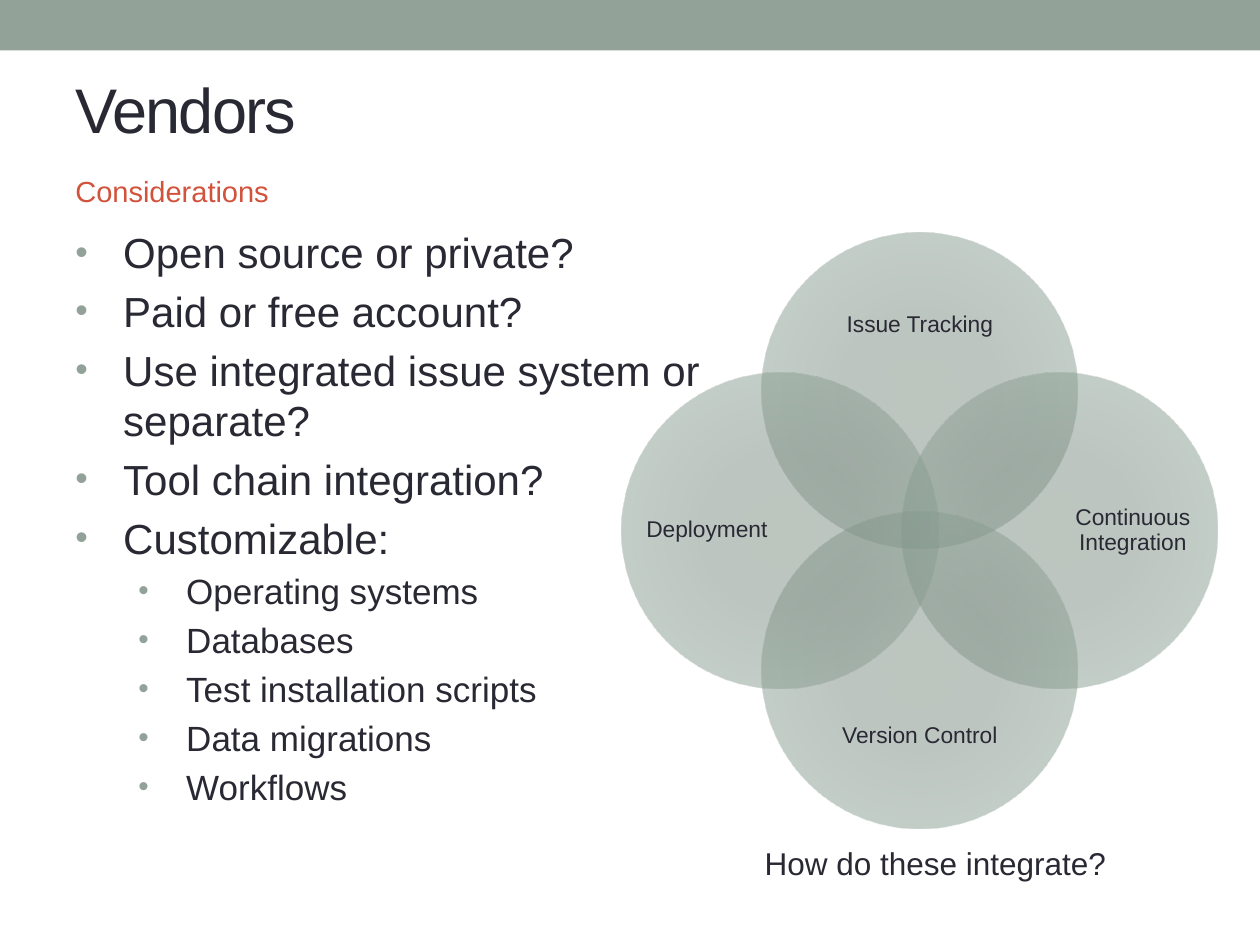
from pptx import Presentation
from pptx.dml.color import RGBColor
from pptx.enum.shapes import MSO_SHAPE as Shape
from pptx.enum.text import MSO_ANCHOR as Anchor, MSO_AUTO_SIZE as AutoSize, PP_ALIGN as Align
from pptx.oxml import parse_xml
from pptx.oxml.ns import nsdecls
from pptx.util import Inches, Pt

INK, SAGE, RUST = "292934", "93A299", "D2533C"
GRADIENT = [(0, "7B8E82"), (34, "7B8D83"), (70, "8A9E92"), (100, SAGE)]
CONSIDERATIONS = [
    (0, "Open source or private?"),
    (0, "Paid or free account?"),
    (0, "Use integrated issue system or separate?"),
    (0, "Tool chain integration?"),
    (0, "Customizable:"),
    (1, "Operating systems"),
    (1, "Databases"),
    (1, "Test installation scripts"),
    (1, "Data migrations"),
    (1, "Workflows"),
]
PETALS = [
    ("Issue Tracking", 0, -1),
    ("Continuous Integration", 1, 0),
    ("Version Control", 0, 1),
    ("Deployment", -1, 0),
]


def color(value):
    return RGBColor.from_string(value)


def element(xml):
    head, tail = xml.split(">", 1) if "/>" not in xml.split(">", 1)[0] + ">" else (xml[:-2], "")
    closing = ">" + tail if tail else "/>"
    return parse_xml(f"{head} {nsdecls('a')}{closing}")


class VendorSlide:
    """Holds the style and the current slide, and adds each kind of element."""

    def __init__(self, deck, font="Arial"):
        self.font = font
        self.page = deck.slides.add_slide(deck.slide_layouts[5])

    def style(self, para, size, ink=INK):
        for span in para.runs:
            span.font.name = self.font
            span.font.size = Pt(size)
            span.font.color.rgb = color(ink)

    def space_before(self, para, percent=20):
        para._p.get_or_add_pPr().append(
            element(f'<a:spcBef><a:spcPct val="{percent * 1000}"/></a:spcBef>'))

    def banner(self, height):
        band = self.page.shapes.add_shape(Shape.RECTANGLE, 0, 0, Inches(10), Inches(height))
        band.shadow.inherit = False
        band.fill.solid()
        band.fill.fore_color.rgb = color(SAGE)
        band.line.fill.background()

    def title(self, text, left, top, width, height):
        box = self.page.shapes.title
        box.left, box.top, box.width, box.height = map(Inches, (left, top, width, height))
        frame = box.text_frame
        frame.text = text
        frame.auto_size = AutoSize.NONE
        frame.vertical_anchor = Anchor.MIDDLE
        para = frame.paragraphs[0]
        para.alignment = Align.LEFT
        self.style(para, 36)
        para.runs[0].font._element.set("spc", "-100")

    def text(self, text, left, top, width, height, size, ink=INK,
             align=Align.LEFT, anchor=Anchor.MIDDLE):
        box = self.page.shapes.add_textbox(*map(Inches, (left, top, width, height)))
        frame = box.text_frame
        frame.word_wrap = True
        frame.vertical_anchor = anchor
        frame.text = text
        for para in frame.paragraphs:
            para.alignment = align
            self.style(para, size, ink)
        return frame

    def bullets(self, items, left, top, width, height):
        lines = "\n".join(text for _, text in items)
        frame = self.text(lines, left, top, width, height, 24, anchor=Anchor.TOP)
        for para, (level, _) in zip(frame.paragraphs, items):
            para.level = level
            self.style(para, 24 - 4 * level)
            self.space_before(para)
            props = para._p.get_or_add_pPr()
            props.set("marL", str(Inches(0.38 + 0.5 * level)))
            props.set("indent", str(Inches(-0.38)))
            for xml in (f'<a:buClr><a:srgbClr val="{SAGE}"/></a:buClr>',
                        '<a:buSzPct val="85000"/>',
                        f'<a:buFont typeface="{self.font}"/>',
                        '<a:buChar char="•"/>'):
                props.append(element(xml))

    def circle(self, center_x, center_y, size):
        corner = (center_x - size / 2, center_y - size / 2)
        disc = self.page.shapes.add_shape(Shape.OVAL, *map(Inches, (*corner, size, size)))
        disc.shadow.inherit = False
        stops = "".join(
            f'<a:gs pos="{place * 1000}"><a:srgbClr val="{tone}">'
            '<a:alpha val="50000"/></a:srgbClr></a:gs>' for place, tone in GRADIENT)
        disc._element.spPr.insert(2, element(
            f'<a:gradFill><a:gsLst>{stops}</a:gsLst><a:path path="circle">'
            '<a:fillToRect l="100000" t="100000" r="100000" b="100000"/>'
            '</a:path></a:gradFill>'))
        disc.line.fill.background()

    def label(self, text, center_x, center_y, width, height):
        frame = self.text(text, center_x - width / 2, center_y - height / 2,
                          width, height, 13, align=Align.CENTER)
        frame.margin_left = frame.margin_right = frame.margin_top = frame.margin_bottom = 0
        frame.paragraphs[0].line_spacing = 0.9

    def venn(self, petals, center_x, center_y):
        for text, across, down in petals:
            self.circle(center_x + 1.11 * across, center_y + 1.11 * down, 2.51)
            size = (0.97, 1.93) if across else (1.93, 0.8)
            self.label(text, center_x + 1.69 * across, center_y + 1.63 * down, *size)


def main():
    deck = Presentation()
    deck.slide_width, deck.slide_height = Inches(10), Inches(7.5)
    slide = VendorSlide(deck)
    slide.banner(0.4)
    slide.title("Vendors", 0.5, 0.49, 9, 0.74)
    slide.bullets(CONSIDERATIONS, 0.5, 1.75, 6.26, 5.33)
    heading = slide.text("Considerations", 0.5, 1.33, 9, 0.33, 16.6, RUST, anchor=Anchor.TOP)
    slide.space_before(heading.paragraphs[0])
    slide.venn(PETALS, 7.3, 4.21)
    slide.text("How do these integrate?", 4.81, 6.63, 5.23, 0.44, 18, align=Align.CENTER)
    deck.save("out.pptx")


if __name__ == "__main__":
    main()
